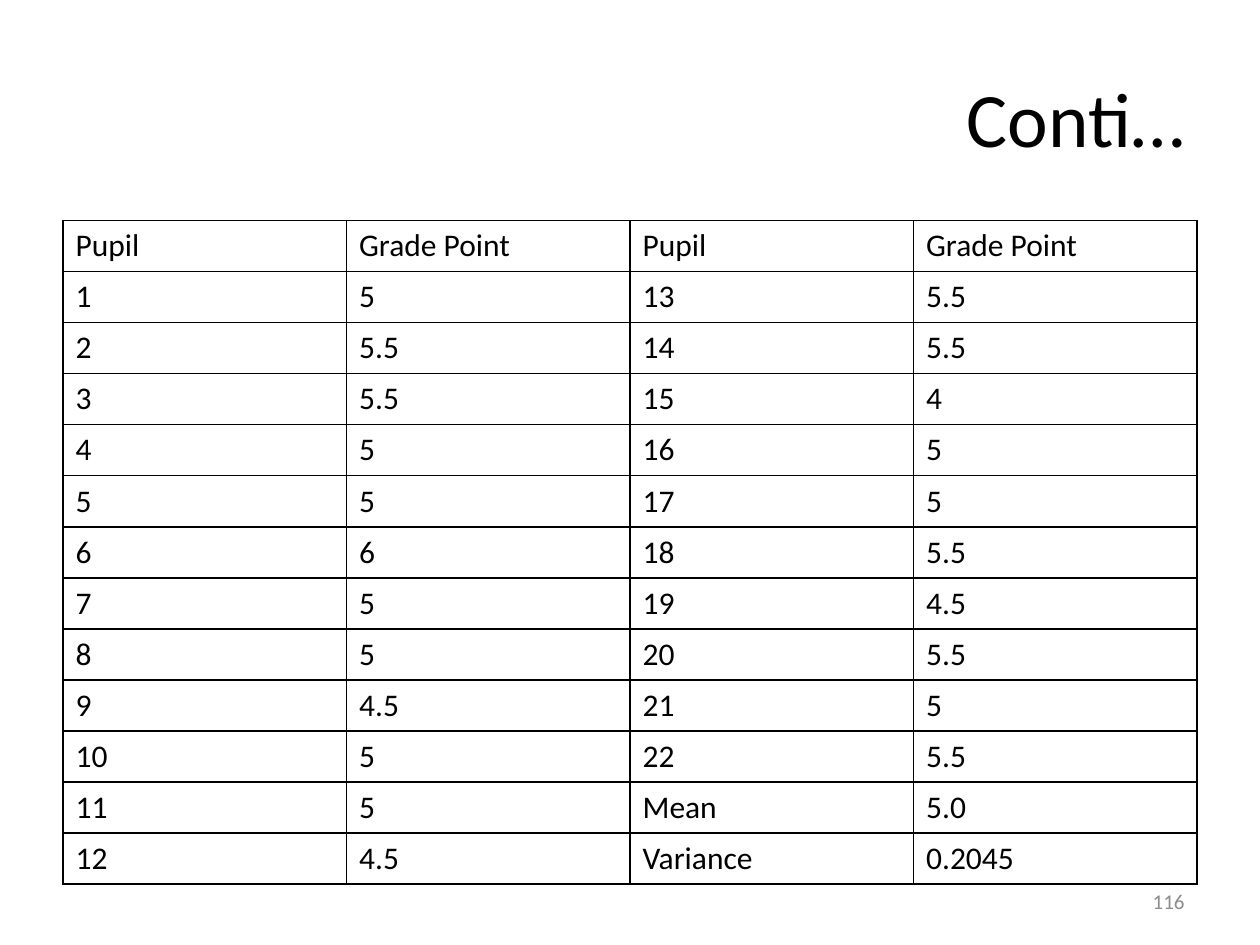
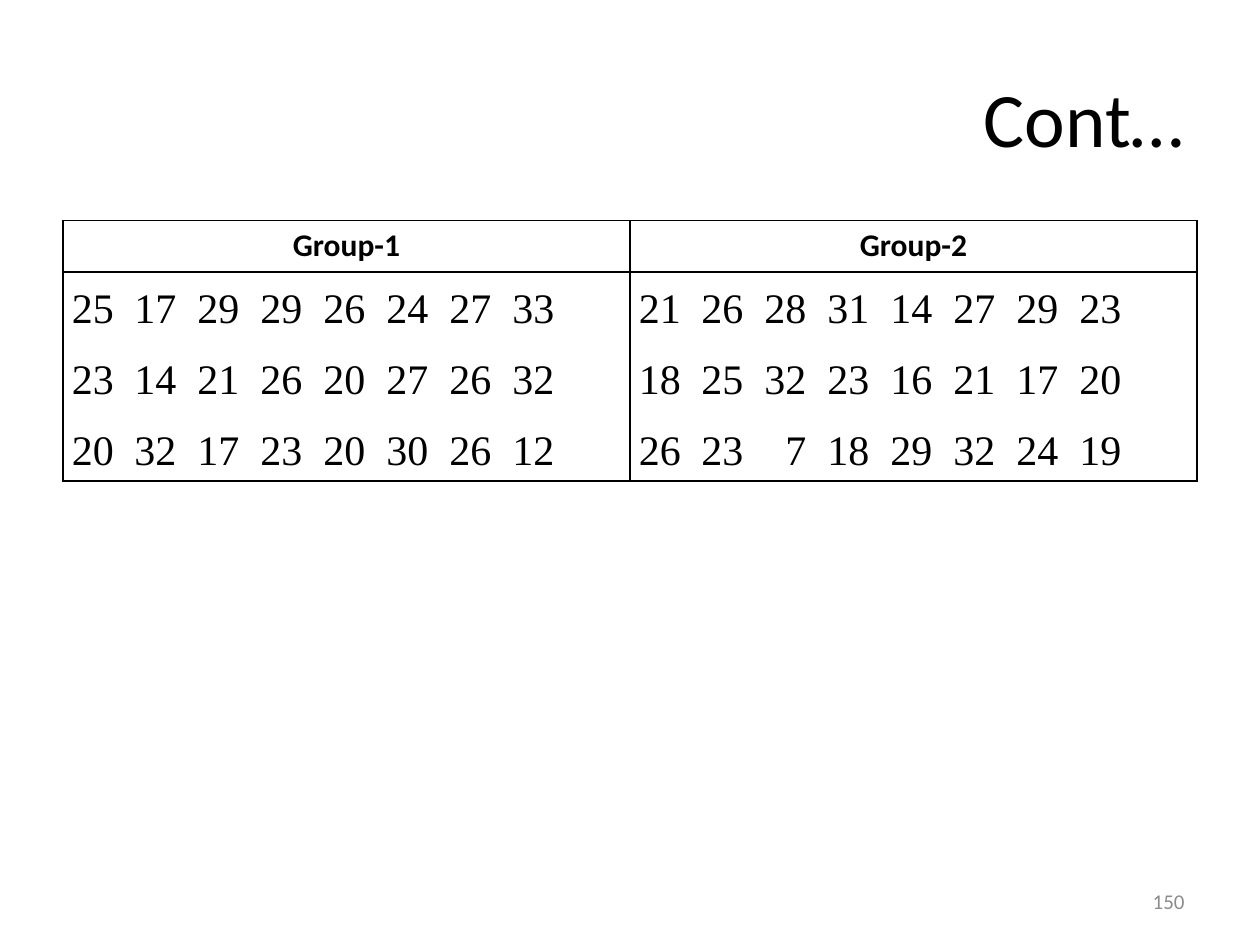
import dataclasses

import pptx
import pptx.dml.color
import pptx.enum.text
import pptx.oxml
import pptx.oxml.ns
import pptx.util

Inches = pptx.util.Inches
Pt = pptx.util.Pt
ALIGN = pptx.enum.text.PP_ALIGN
ANCHOR = pptx.enum.text.MSO_ANCHOR


@dataclasses.dataclass(frozen=True)
class Theme:
    text: str = "000000"
    page_number: str = "8C8C8C"
    border: str = "000000"
    font: str = "Calibri"
    score_font: str = "Times New Roman"
    title_size: int = 44
    table_size: int = 18
    score_size: int = 24
    page_number_size: int = 12


theme = Theme()
LEFT, TABLE_TOP, WIDTH = 0.5, 1.75, 9


def style_text(text_frame, size, alignment, color=theme.text, font=theme.font, bold=False):
    for paragraph in text_frame.paragraphs:
        paragraph.alignment = alignment
        for run in paragraph.runs:
            run.font.name = font
            run.font.size = Pt(size)
            run.font.bold = bold
            run.font.color.rgb = pptx.dml.color.RGBColor.from_string(color)


def add_bordered_table(slide, rows, columns, height):
    table = slide.shapes.add_table(rows, columns, Inches(LEFT), Inches(TABLE_TOP),
                                   Inches(WIDTH), Inches(height)).table
    table.first_row = False
    table.horz_banding = False
    for cell in table.iter_cells():
        properties = cell._tc.get_or_add_tcPr()
        for side in ("lnL", "lnR", "lnT", "lnB"):
            properties.append(pptx.oxml.parse_xml(
                f'<a:{side} {pptx.oxml.ns.nsdecls("a")} w="{Pt(1)}"><a:solidFill>'
                f'<a:srgbClr val="{theme.border}"/></a:solidFill></a:{side}>'))
        cell.fill.background()
    return table


presentation = pptx.Presentation()
presentation.slide_width = Inches(10)
presentation.slide_height = Inches(7.5)

# Title and page number on every slide
slides = []
for title, page_number in (("Conti…", "116"), ("Cont…", "150")):
    slide = presentation.slides.add_slide(presentation.slide_layouts[5])
    slides.append(slide)
    title_shape = slide.shapes.title
    title_shape.left, title_shape.top = Inches(LEFT), Inches(0.3)
    title_shape.width, title_shape.height = Inches(WIDTH), Inches(1.25)
    title_shape.text_frame.text = title
    title_shape.text_frame.vertical_anchor = ANCHOR.MIDDLE
    style_text(title_shape.text_frame, theme.title_size, ALIGN.RIGHT)

    number_box = slide.shapes.add_textbox(Inches(7.17), Inches(6.95), Inches(2.33), Inches(0.4))
    number_box.text_frame.word_wrap = True
    number_box.text_frame.vertical_anchor = ANCHOR.MIDDLE
    number_box.text_frame.text = page_number
    style_text(number_box.text_frame, theme.page_number_size, ALIGN.RIGHT, theme.page_number)

grades_slide, groups_slide = slides

# Grade points: pupils 1 to 12 on the left, the rest and the summary on the right
grades = ("5 5.5 5.5 5 5 6 5 5 4.5 5 5 4.5 "
          "5.5 5.5 4 5 5 5.5 4.5 5.5 5 5.5").split()
entries = [(str(pupil), grade) for pupil, grade in enumerate(grades, start=1)]
entries += [("Mean", "5.0"), ("Variance", "0.2045")]
header = ("Pupil", "Grade Point")
half = len(entries) // 2
grade_rows = [header + header]
grade_rows += [left + right for left, right in zip(entries[:half], entries[half:])]

grade_table = add_bordered_table(grades_slide, len(grade_rows), 4, 5.27)
for row_index, grade_row in enumerate(grade_rows):
    for column_index, value in enumerate(grade_row):
        cell = grade_table.cell(row_index, column_index)
        cell.text_frame.text = value
        style_text(cell.text_frame, theme.table_size, ALIGN.LEFT)

# Scores of the two groups, lined up on right-aligned tab stops
groups = {
    "Group-1": ("25 17 29 29 26 24 27 33", "23 14 21 26 20 27 26 32", "20 32 17 23 20 30 26 12"),
    "Group-2": ("21 26 28 31 14 27 29 23", "18 25 32 23 16 21 17 20", "26 23 7 18 29 32 24 19"),
}
FIRST_TAB, TAB_STEP, TAB_COUNT = 0.83, 0.5, 7
tab_stops = "".join(f'<a:tab pos="{Inches(FIRST_TAB + TAB_STEP * index)}" algn="r"/>'
                    for index in range(TAB_COUNT))

group_table = add_bordered_table(groups_slide, 2, len(groups), 1.96)
group_table.rows[0].height = Inches(0.41)
group_table.rows[1].height = Inches(1.55)
for column_index, (group, score_lines) in enumerate(groups.items()):
    heading = group_table.cell(0, column_index)
    heading.text_frame.text = group
    style_text(heading.text_frame, theme.table_size, ALIGN.CENTER, bold=True)

    scores = group_table.cell(1, column_index)
    scores.vertical_anchor = ANCHOR.MIDDLE
    scores.margin_left = scores.margin_right = Inches(0.07)
    scores.margin_top = scores.margin_bottom = 0
    scores.text_frame.text = "\n".join(line.replace(" ", "\t") for line in score_lines)
    style_text(scores.text_frame, theme.score_size, ALIGN.JUSTIFY, font=theme.score_font)
    for paragraph in scores.text_frame.paragraphs:
        paragraph.line_spacing = 1.15
        paragraph.space_after = Pt(10)
        paragraph._p.get_or_add_pPr().append(pptx.oxml.parse_xml(
            f'<a:tabLst {pptx.oxml.ns.nsdecls("a")}>{tab_stops}</a:tabLst>'))

presentation.save("out.pptx")
